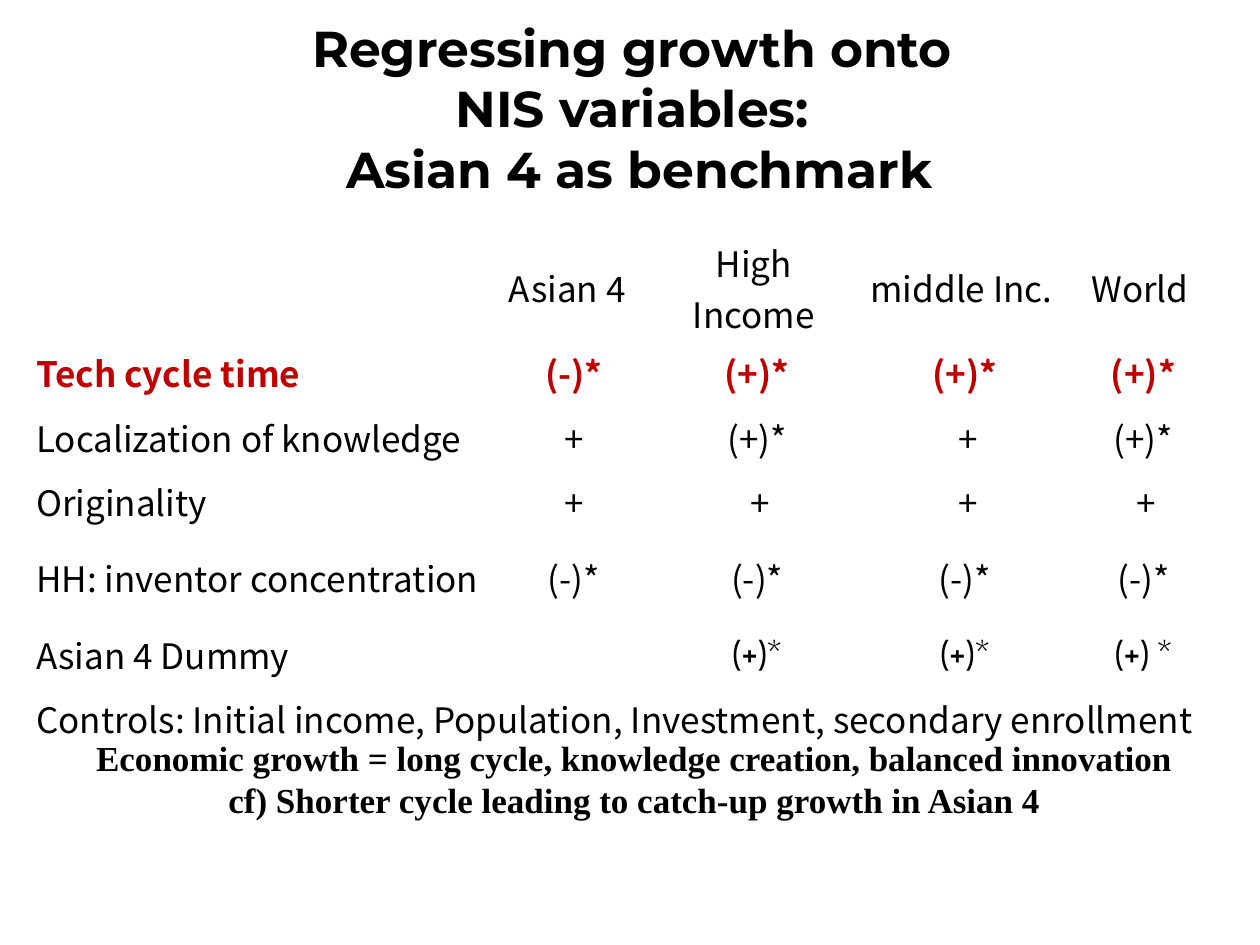
import pptx
import pptx.dml.color
import pptx.enum.text
import pptx.util

Cm = pptx.util.Cm
ALIGN = pptx.enum.text.PP_ALIGN
ANCHOR = pptx.enum.text.MSO_ANCHOR
BLACK = pptx.dml.color.RGBColor(0x00, 0x00, 0x00)
RED = pptx.dml.color.RGBColor(0xC0, 0x00, 0x00)

TITLE = {"name": "Montserrat", "size": pptx.util.Pt(28.8), "bold": True}
SUMMARY = {"name": "Times New Roman", "size": pptx.util.Pt(20), "bold": True}
BODY = {"name": "Noto Sans CJK KR", "size": pptx.util.Pt(20), "bold": False}


def write_paragraph(paragraph, text, font, color=BLACK, alignment=ALIGN.CENTER):
    paragraph.text = text
    paragraph.alignment = alignment
    for run in paragraph.runs:
        for attribute, value in font.items():
            setattr(run.font, attribute, value)
        run.font.color.rgb = color


presentation = pptx.Presentation()
presentation.slide_width = Cm(25.4)
presentation.slide_height = Cm(19.05)
slide = presentation.slides.add_slide(presentation.slide_layouts[6])

# Title
title_frame = slide.shapes.add_textbox(Cm(1.27), Cm(0.53), Cm(23.24), Cm(3.59)).text_frame
title_frame.word_wrap = True
title_frame.vertical_anchor = ANCHOR.BOTTOM
write_paragraph(title_frame.paragraphs[0],
                "Regressing growth onto \vNIS variables: \vAsian 4 as benchmark", TITLE)

# Regression results
results = [
    ["", "Asian 4", "High Income", "middle Inc.", "World"],
    ["Tech cycle time", "(-)*", "(+)*", "(+)*", "(+)*"],
    ["Localization of knowledge", "+", "(+)*", "+", "(+)*"],
    ["Originality", "+", "+", "+", "+"],
    ["HH: inventor concentration", "(-)*", "(-)*", "(-)*", "(-)*"],
    ["Asian 4 Dummy", "", "(+)*", "(+)*", "(+) *"],
    ["Controls: Initial income, Population, Investment, secondary enrollment",
     "", "", "", ""],
]
column_widths = [9.07, 3.33, 4.19, 4.19, 3.0]
# The header row holds two lines of text
row_heights = [2.12, 1.3, 1.3, 1.3, 1.78, 1.3, 1.3]

table = slide.shapes.add_table(len(results), len(column_widths), Cm(0.7), Cm(4.72),
                               Cm(sum(column_widths)), Cm(sum(row_heights))).table
table.first_row = False
table.horz_banding = False
for column, width in zip(table.columns, column_widths):
    column.width = Cm(width)
for row, height in zip(table.rows, row_heights):
    row.height = Cm(height)
table.cell(6, 0).merge(table.cell(6, 4))

for row_index, row_texts in enumerate(results):
    for column_index, text in enumerate(row_texts):
        cell = table.cell(row_index, column_index)
        cell.fill.background()
        if not text:
            continue
        is_label = column_index == 0
        left = right = 0.03
        if row_index == 0:
            left = right = 0.1
        elif not is_label:
            # Signs sit slightly right of the column centre
            left = 0.3 if column_index == 1 or text == "+" else 0.17
        cell_format = {
            "margin_left": Cm(left), "margin_right": Cm(right),
            "margin_top": Cm(0.03), "margin_bottom": Cm(0),
            "vertical_anchor": ANCHOR.MIDDLE,
        }
        for attribute, value in cell_format.items():
            setattr(cell, attribute, value)
        font = dict(BODY, bold=row_index == 1)
        if row_index == 5 and not is_label:
            font["name"] = "Cabin"
        write_paragraph(cell.text_frame.paragraphs[0], text, font,
                        RED if row_index == 1 else BLACK,
                        ALIGN.LEFT if is_label else ALIGN.CENTER)

# Summary
summary_frame = slide.shapes.add_textbox(Cm(1.27), Cm(14.73), Cm(23.04), Cm(1.96)).text_frame
summary_frame.word_wrap = True
write_paragraph(summary_frame.paragraphs[0],
                "Economic growth = long cycle, knowledge creation, balanced innovation", SUMMARY)
write_paragraph(summary_frame.add_paragraph(),
                "cf) Shorter cycle leading to catch-up growth in Asian 4", SUMMARY)

presentation.save("out.pptx")
